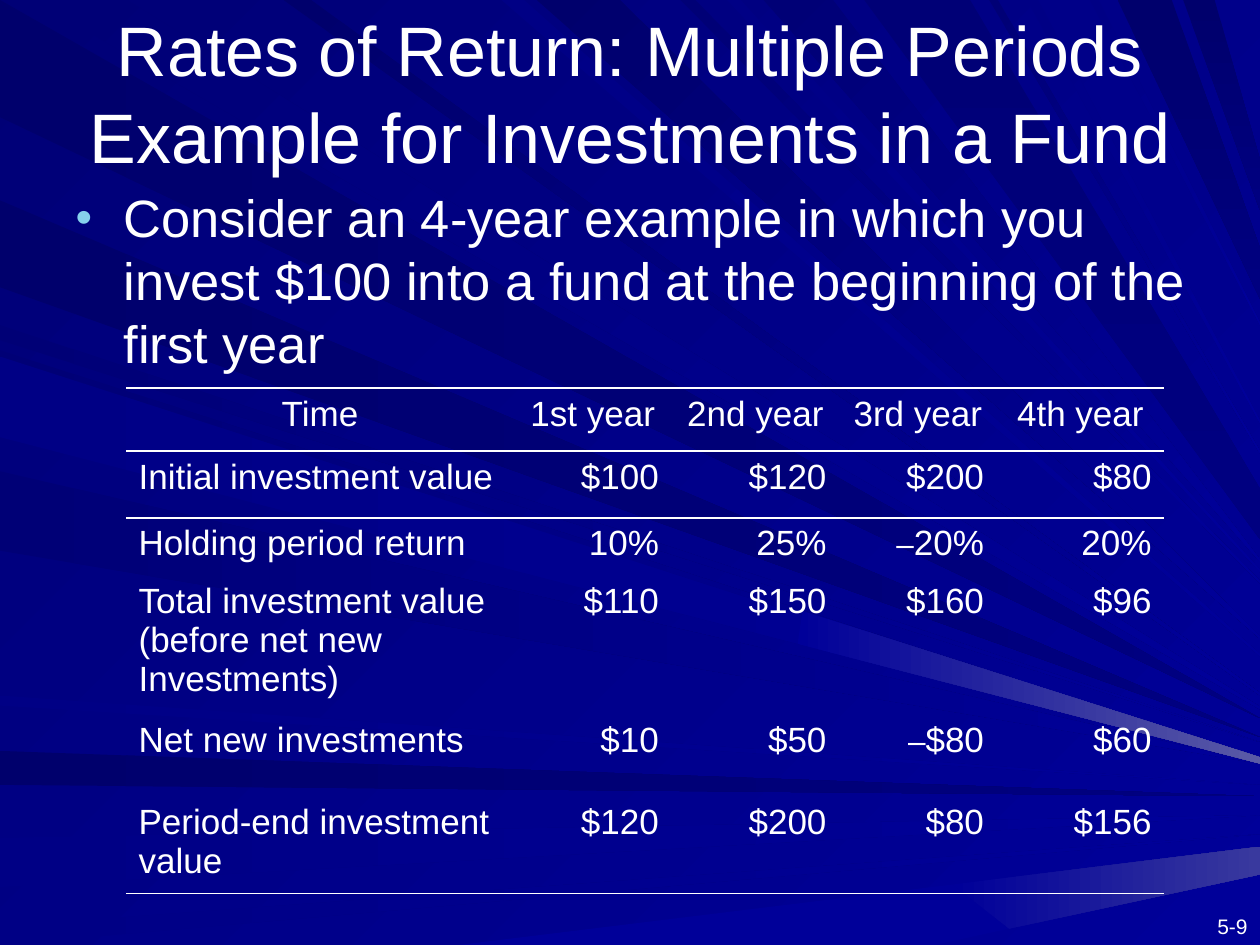
"""Build a slide on multi-period rates of return, with a fund example table over blue rays."""
from lxml.etree import SubElement
from pptx import Presentation
from pptx.dml.color import RGBColor
from pptx.enum.text import MSO_ANCHOR, MSO_AUTO_SIZE, PP_ALIGN
from pptx.oxml.ns import qn
from pptx.util import Inches, Pt

WHITE = RGBColor.from_string("FFFFFF")
SKY = RGBColor.from_string("86D1EC")
INK = RGBColor.from_string("00006C")
DEEP = RGBColor.from_string("000076")
MARINE = RGBColor.from_string("000085")
NAVY = RGBColor.from_string("000080")
ROYAL = RGBColor.from_string("000099")
HAZE = RGBColor.from_string("5A5AA6")
DUSK = RGBColor.from_string("39399E")
NO_STYLE_NO_GRID = "{2D5ABB26-0587-4C30-8999-92F81FD0307C}"

LEFT_RAYS = [
    (0, 93, 570, INK, NAVY), (596, 623, 632, INK, NAVY), (665, 704, 647, MARINE, ROYAL),
    (735, 750, 662, MARINE, ROYAL), (258, 270, 589, DEEP, ROYAL), (159, 228, 585, INK, NAVY),
    (278, 342, 602, DEEP, ROYAL), (374, 437, 606, DEEP, ROYAL), (552, 560, 623, MARINE, ROYAL),
    (283, 347, 606, MARINE, ROYAL),
]
TOP_RAYS = [
    (26, 101, 563, DEEP, ROYAL), (398, 416, 521, MARINE, ROYAL), (426, 492, 507, INK, ROYAL),
    (540, 552, 463, DEEP, ROYAL), (606, 661, 446, DEEP, ROYAL), (887, 930, 237, INK, NAVY),
    (939, 964, 167, INK, NAVY), (225, 247, 552, INK, ROYAL), (577, 588, 454, MARINE, ROYAL),
    (686, 770, 428, DEEP, NAVY), (785, 792, 360, DEEP, ROYAL), (815, 824, 336, MARINE, ROYAL),
    (865, 872, 258, MARINE, ROYAL),
]
GLOWS = [
    (ROYAL, ROYAL, 0, [(742, 750), (801, 737), (756, 702), (364, 750)]),
    (ROYAL, DUSK, 0, [(1000, 694), (1000, 672), (756, 702), (801, 737)]),
    (ROYAL, HAZE, 0, [(1000, 601), (637, 485), (633, 511), (1000, 606)]),
]

TABLE_ROWS = [
    ("Time", "1st year", "2nd year", "3rd year", "4th year"),
    ("Initial investment value", "$100", "$120", "$200", "$80"),
    ("Holding period return", "10%", "25%", "–20%", "20%"),
    ("Total investment value (before net new Investments)", "$110", "$150", "$160", "$96"),
    ("Net new investments", "$10", "$50", "–$80", "$60"),
    ("Period-end investment value", "$120", "$200", "$80", "$156"),
]
COLUMN_WIDTHS = (3.08, 1.25, 1.33, 1.25, 1.33)
ROW_HEIGHTS = (0.5, 0.53, 0.46, 1.1, 0.65, 0.77)
RULES = {0: ("a:lnT", "a:lnB"), 1: ("a:lnT",), len(TABLE_ROWS) - 1: ("a:lnB",)}


def paint(fill, start, end, angle):
    """Fill with one colour, or with a gradient at a clockwise angle."""
    if start == end:
        fill.solid()
        fill.fore_color.rgb = start
        return
    fill.gradient()
    fill.gradient_angle = -angle % 360
    for stop, color in zip(fill.gradient_stops, (start, end)):
        stop.color.rgb = color


def write(paragraph, text, size, **formats):
    """Add a white Arial run and set the paragraph's formats."""
    run = paragraph.add_run()
    run.text = text
    run.font.color.rgb = WHITE
    for name, value in {"name": "Arial", "size": Pt(size)}.items():
        setattr(run.font, name, value)
    for name, value in formats.items():
        setattr(paragraph, name, value)


presentation = Presentation()
presentation.slide_width, presentation.slide_height = Inches(10), Inches(7.5)
slide = presentation.slides.add_slide(presentation.slide_layouts[1])
paint(slide.background.fill, DEEP, ROYAL, 45)
unit = presentation.slide_width / 1000

rays = [(start, end, 0, [(0, upper), (1000, tip), (0, lower)])
        for upper, lower, tip, start, end in LEFT_RAYS]
for near, far, tip, start, end in TOP_RAYS:
    angle, thickness = (90, 40) if end == NAVY else (45, 2)
    rays.append((start, end, angle, [(near, 0), (1000, tip), (1000, tip - thickness), (far, 0)]))

for start, end, angle, points in rays + GLOWS:
    builder = slide.shapes.build_freeform(*points[0], scale=unit)
    builder.add_line_segments(points[1:], close=True)
    ray = builder.convert_to_shape()
    ray.shadow.inherit = False
    ray.line.fill.background()
    paint(ray.fill, start, end, angle)

page_number = slide.shapes.add_textbox(Inches(8.92), Inches(7.2), Inches(1.08), Inches(0.3))
page_number.text_frame.word_wrap = True
write(page_number.text_frame.paragraphs[0], "5-9", 12, alignment=PP_ALIGN.RIGHT)

title, body = slide.placeholders
slide.shapes._spTree.append(title._element)
table_frame = slide.shapes.add_table(
    len(ROW_HEIGHTS), len(COLUMN_WIDTHS), Inches(1), Inches(3.08),
    Inches(sum(COLUMN_WIDTHS)), Inches(sum(ROW_HEIGHTS)))
slide.shapes._spTree.append(body._element)

for shape, anchor, box in (
        (title, MSO_ANCHOR.BOTTOM, (0, 0.58, 10, 0.88)),
        (body, MSO_ANCHOR.TOP, (0.5, 1.42, 9.17, 1.57))):
    for name, value in zip(("left", "top", "width", "height"), box):
        setattr(shape, name, Inches(value))
    for name, value in {"vertical_anchor": anchor, "word_wrap": True,
                        "auto_size": MSO_AUTO_SIZE.NONE}.items():
        setattr(shape.text_frame, name, value)

write(title.text_frame.paragraphs[0],
      "Rates of Return: Multiple Periods Example for Investments in a Fund", 40,
      alignment=PP_ALIGN.CENTER, line_spacing=1.04)

bullet = body.text_frame.paragraphs[0]
properties = bullet._p.get_or_add_pPr()
properties.set("marL", str(Inches(0.38)))
properties.set("indent", str(-Inches(0.38)))
bullet_color = SubElement(properties, qn("a:buClr"))
SubElement(bullet_color, qn("a:srgbClr"), val=str(SKY))
SubElement(properties, qn("a:buSzPct"), val="90000")
SubElement(properties, qn("a:buFont"), typeface="Arial")
SubElement(properties, qn("a:buChar"), char="•")
write(bullet, "Consider an 4-year example in which you invest $100 into a fund "
      "at the beginning of the first year", 30, space_before=Pt(0), line_spacing=1.0)

table = table_frame.table
table.first_row = table.horz_banding = False
table._tbl.tblPr.find(qn("a:tableStyleId")).text = NO_STYLE_NO_GRID
for column, width in zip(table.columns, COLUMN_WIDTHS):
    column.width = Inches(width)
for row_index, (height, texts) in enumerate(zip(ROW_HEIGHTS, TABLE_ROWS)):
    table.rows[row_index].height = Inches(height)
    for column_index, text in enumerate(texts):
        cell = table.cell(row_index, column_index)
        for side in RULES.get(row_index, ()):
            rule = SubElement(cell._tc.get_or_add_tcPr(), qn(side), w=str(Pt(1)))
            SubElement(SubElement(rule, qn("a:solidFill")), qn("a:srgbClr"), val=str(WHITE))
        cell.fill.background()
        paragraph = cell.text_frame.paragraphs[0]
        paragraph.alignment = (PP_ALIGN.CENTER if row_index == 0 else
                               PP_ALIGN.RIGHT if column_index else PP_ALIGN.LEFT)
        if text.startswith("–"):
            write(paragraph, "–", 18)
        write(paragraph, text.lstrip("–"), 20)

presentation.save("out.pptx")
